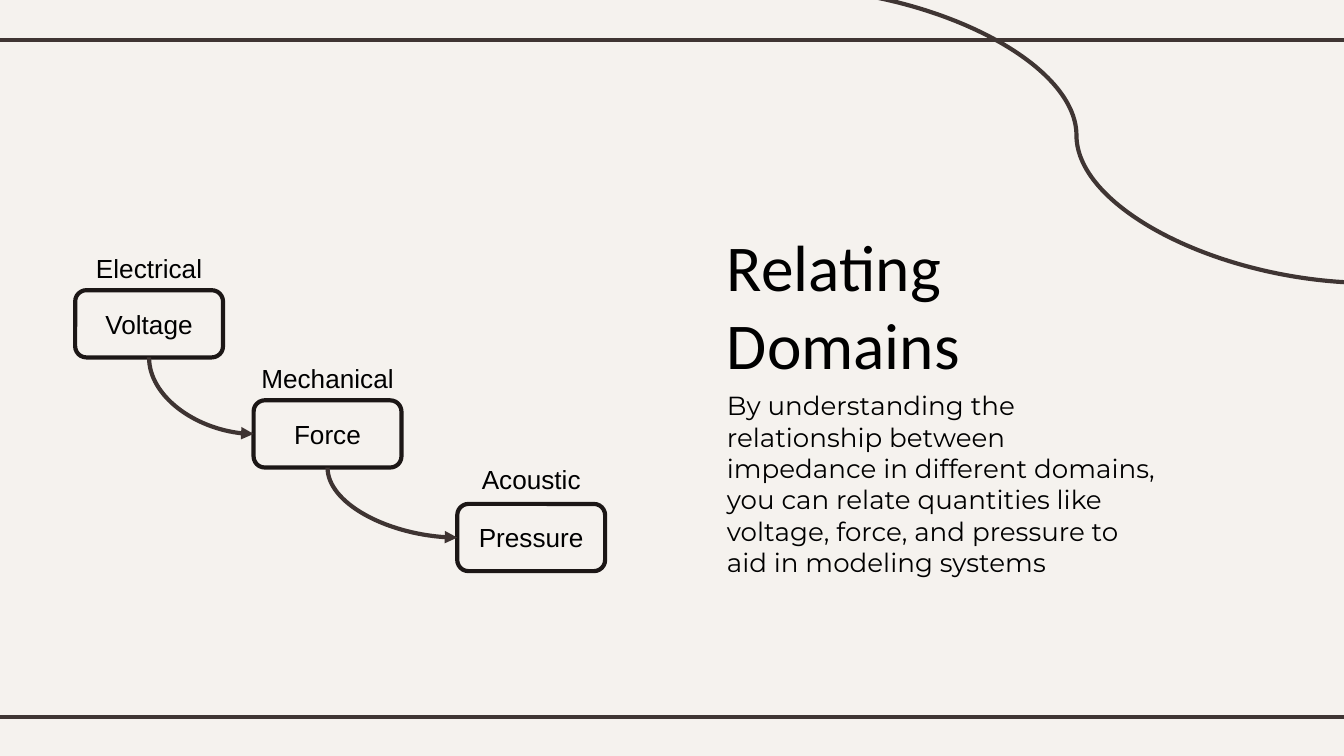
from lxml import etree
from pptx import Presentation
from pptx.dml.color import RGBColor
from pptx.enum import shapes, text
from pptx.oxml.ns import qn
from pptx.util import Pt

INK, EDGE, ARROW = "3F3533", "1C1716", "3E3432"
KIND = shapes.MSO_CONNECTOR


def rgb(code):
    return RGBColor.from_string(code)


def link(kind, x1, y1, x2, y2, color):
    line = slide.shapes.add_connector(kind, Pt(x1), Pt(y1), Pt(x2), Pt(y2))
    line.line.color.rgb = rgb(color)
    line.line.width = Pt(2.25)
    etree.SubElement(line._element.spPr, qn("a:effectLst"))
    return line


deck = Presentation()
deck.slide_width, deck.slide_height = Pt(720), Pt(405)
slide = deck.slides.add_slide(deck.slide_layouts[6])
slide.background.fill.solid()
slide.background.fill.fore_color.rgb = rgb("F5F2EE")

# Frame lines and corner curve
for y in (21.4, 384):
    link(KIND.STRAIGHT, -6, y, 726, y, INK)
link(KIND.CURVE, 419, -6.5, 734.4, 151.6, INK)

# Title and body
body = ("By understanding the relationship between impedance in different "
        "domains, you can relate quantities like voltage, force, and "
        "pressure to aid in modeling systems")
for top, words, font, size, after in (
        (113.8, "Relating Domains", "Calibri", 35, 0),
        (201.6, body, "Montserrat", 14, 10)):
    box = slide.shapes.add_textbox(Pt(382.3), Pt(top), Pt(246.2), Pt(105.8))
    frame = box.text_frame
    frame.word_wrap = True
    frame.margin_left = frame.margin_right = Pt(7.2)
    frame.margin_top = frame.margin_bottom = Pt(7.2)
    frame.text = words
    para = frame.paragraphs[0]
    para.space_after = Pt(after)
    para.font.name, para.font.size = font, Pt(size)
    para.font.color.rgb = rgb("000000")

# Domain steps: a rounded box under a centred label
WIDE, HIGH = 79.2, 36
steps = [
    ("Electrical", "Voltage", 40.3, 155.5, 131.8, 71.8),
    ("Mechanical", "Force", 135.9, 214.5, 190.4, 85.6),
    ("Acoustic", "Pressure", 245, 270, 244.9, 67.6),
]
boxes = []
for name, unit, left, top, high, span in steps:
    box = slide.shapes.add_shape(shapes.MSO_SHAPE.ROUNDED_RECTANGLE,
                                 Pt(left), Pt(top), Pt(WIDE), Pt(HIGH))
    box.shadow.inherit = False
    box.fill.background()
    box.line.color.rgb = rgb(EDGE)
    box.line.width = Pt(2.25)
    box.text_frame.vertical_anchor = text.MSO_ANCHOR.MIDDLE
    boxes.append(box)
    label = slide.shapes.add_textbox(Pt(left + (WIDE - span) / 2), Pt(high),
                                     Pt(span), Pt(24.2))
    label.text_frame.word_wrap = False
    label.text_frame.auto_size = text.MSO_AUTO_SIZE.SHAPE_TO_FIT_TEXT
    for part, words in ((box, unit), (label, name)):
        part.text_frame.text = words
        para = part.text_frame.paragraphs[0]
        para.alignment = text.PP_ALIGN.CENTER
        para.font.name, para.font.size = "Arial", Pt(14)
        para.font.color.rgb = rgb("000000")

# Quarter-turn arrows from the bottom of a box to the left of the next
for near, far in zip(boxes, boxes[1:]):
    x1, y1 = near.left.pt + WIDE / 2, near.top.pt + HIGH
    x2, y2 = far.left.pt, far.top.pt + HIGH / 2
    arrow = link(KIND.CURVE, x1, y1, x2, y2, ARROW)
    arrow.begin_connect(near, 2)
    arrow.end_connect(far, 1)
    # The unturned frame has width and height swapped about the same centre
    wide, high = y2 - y1, x2 - x1
    arrow.left, arrow.top = Pt((x1 + x2 - wide) / 2), Pt((y1 + y2 - high) / 2)
    arrow.width, arrow.height = Pt(wide), Pt(high)
    props = arrow._element.spPr
    turn = props.find(qn("a:xfrm"))
    turn.set("rot", "16200000")
    turn.set("flipH", "1")
    props.find(qn("a:prstGeom")).set("prst", "curvedConnector2")
    etree.SubElement(props.find(qn("a:ln")), qn("a:tailEnd"), type="triangle")

deck.save("out.pptx")
